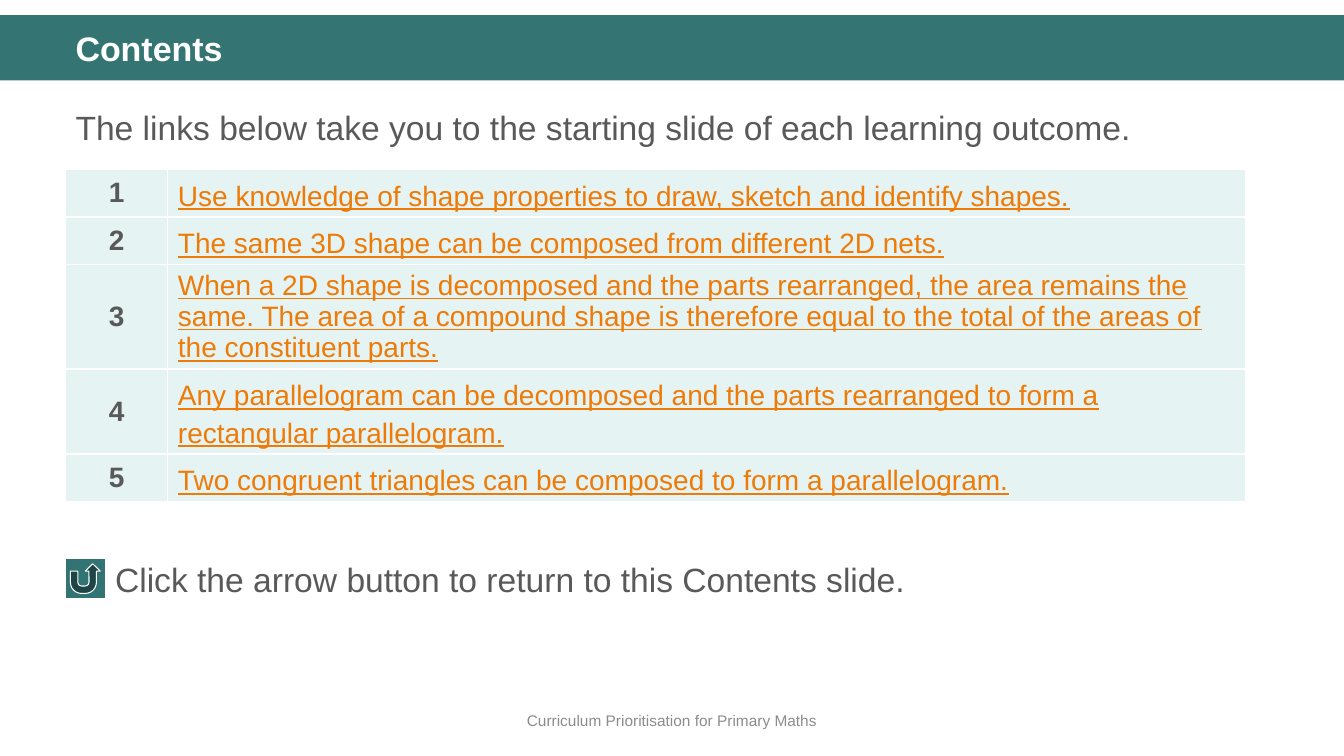
import pptx
import pptx.dml.color
import pptx.enum.shapes
import pptx.enum.text
import pptx.oxml
import pptx.oxml.ns
import pptx.util

Cm = pptx.util.Cm
ALIGN = pptx.enum.text.PP_ALIGN
ANCHOR = pptx.enum.text.MSO_ANCHOR
SHAPE = pptx.enum.shapes.MSO_SHAPE

COLOURS = {
    "banner": "347574",
    "button": "327473",
    "cell": "E5F3F2",
    "text": "595959",
    "link": "EE7B08",
    "footer": "8C8C8C",
    "white": "FFFFFF",
}
OUTCOMES = [
    ("Use knowledge of shape properties to draw, sketch and identify shapes.", 1.19, 1.2),
    ("The same 3D shape can be composed from different 2D nets.", 1.19, 1.2),
    ("When a 2D shape is decomposed and the parts rearranged, the area remains the same. "
     "The area of a compound shape is therefore equal to the total of the areas of "
     "the constituent parts.", 2.63, 1.0),
    ("Any parallelogram can be decomposed and the parts rearranged to form a "
     "rectangular parallelogram.", 2.14, 1.2),
    ("Two congruent triangles can be composed to form a parallelogram.", 1.19, 1.2),
]
WIDTH, HEIGHT = 33.87, 19.05
LEFT = 1.65


class ContentsPage:
    """Draws the elements of the contents slide in one shared style."""

    def __init__(self, deck):
        self.font_name = "Arial"
        self.page = deck.slides.add_slide(deck.slide_layouts[1])

    def colour(self, name):
        return pptx.dml.color.RGBColor.from_string(COLOURS[name])

    def add_words(self, frame, words, size, colour, bold=False, underline=False,
                  align=ALIGN.LEFT, spacing=1.0, anchor=ANCHOR.MIDDLE):
        frame.word_wrap = True
        frame.vertical_anchor = anchor
        para = frame.paragraphs[0]
        para.alignment = align
        para.line_spacing = spacing
        para.space_before = pptx.util.Pt(0)
        span = para.add_run()
        span.text = words
        span.font.name = self.font_name
        span.font.size = pptx.util.Pt(size)
        span.font.bold = bold
        span.font.underline = underline
        span.font.color.rgb = self.colour(colour)

    def place(self, holder, left, top, width, height):
        holder.left, holder.top = Cm(left), Cm(top)
        holder.width, holder.height = Cm(width), Cm(height)
        holder.text_frame.auto_size = pptx.enum.text.MSO_AUTO_SIZE.NONE

    def title(self, words, *area):
        holder = self.page.shapes.title
        self.place(holder, *area)
        self.add_words(holder.text_frame, words, 24.3, "white", bold=True, spacing=0.9)

    def body(self, words, *area):
        holder = self.page.placeholders[1]
        self.place(holder, *area)
        properties = holder.text_frame.paragraphs[0]._p.get_or_add_pPr()
        properties.set("marL", "0")
        properties.set("indent", "0")
        properties.append(pptx.oxml.parse_xml(
            f'<a:buNone {pptx.oxml.ns.nsdecls("a")}/>'))
        self.add_words(holder.text_frame, words, 24, "text", spacing=1.2,
                       anchor=ANCHOR.TOP)

    def shape(self, kind, fill, left, top, width, height, line=None):
        shape = self.page.shapes.add_shape(kind, Cm(left), Cm(top), Cm(width), Cm(height))
        shape.shadow.inherit = False
        shape.fill.solid()
        shape.fill.fore_color.rgb = self.colour(fill)
        if line:
            shape.line.color.rgb = self.colour(line)
            shape.line.width = pptx.util.Pt(0.75)
        else:
            shape.line.fill.background()
        return shape

    def banner(self, *area):
        bar = self.shape(SHAPE.RECTANGLE, "banner", *area)
        self.page.shapes.title.element.addprevious(bar.element)

    def text(self, words, size, colour, left, top, width, height, align=ALIGN.LEFT):
        box = self.page.shapes.add_textbox(Cm(left), Cm(top), Cm(width), Cm(height))
        self.add_words(box.text_frame, words, size, colour, align=align)

    def style_cell(self, cell):
        properties = cell._tc.get_or_add_tcPr()
        for side in ("lnL", "lnR", "lnT", "lnB"):
            properties.append(pptx.oxml.parse_xml(
                f'<a:{side} {pptx.oxml.ns.nsdecls("a")} w="12700"><a:solidFill>'
                f'<a:srgbClr val="{COLOURS["white"]}"/></a:solidFill></a:{side}>'))
        cell.fill.solid()
        cell.fill.fore_color.rgb = self.colour("cell")
        cell.vertical_anchor = ANCHOR.MIDDLE

    def table(self, outcomes, left, top, widths):
        total = sum(height for _, height, _ in outcomes)
        table = self.page.shapes.add_table(
            len(outcomes), len(widths), Cm(left), Cm(top), Cm(sum(widths)), Cm(total)).table
        table.first_row = table.horz_banding = False
        for column, width in zip(table.columns, widths):
            column.width = Cm(width)
        for index, (outcome, height, spacing) in enumerate(outcomes):
            table.rows[index].height = Cm(height)
            number, link = table.rows[index].cells
            self.style_cell(number)
            self.style_cell(link)
            self.add_words(number.text_frame, str(index + 1), 20, "text", bold=True,
                           align=ALIGN.CENTER)
            self.add_words(link.text_frame, outcome, 20, "link", underline=True,
                           spacing=spacing)


def main():
    deck = pptx.Presentation()
    deck.slide_width, deck.slide_height = Cm(WIDTH), Cm(HEIGHT)
    contents = ContentsPage(deck)
    contents.banner(0, 0.38, WIDTH, 1.65)
    contents.title("Contents", LEFT, 0.68, 30.94, 1.2)
    contents.body("The links below take you to the starting slide of each learning outcome.",
                  LEFT, 2.36, 30.94, 1.6)
    contents.table(OUTCOMES, LEFT, 4.27, (2.58, 27.17))
    contents.shape(SHAPE.ACTION_BUTTON_RETURN, "button", LEFT, 14.08, 1, 1, line="white")
    contents.text("Click the arrow button to return to this Contents slide.",
                  24, "text", 2.65, 13.95, 28.75, 1.28)
    contents.text("Curriculum Prioritisation for Primary Maths",
                  11, "footer", 0, 17.65, WIDTH, 1.02, align=ALIGN.CENTER)
    deck.save("out.pptx")


if __name__ == "__main__":
    main()
